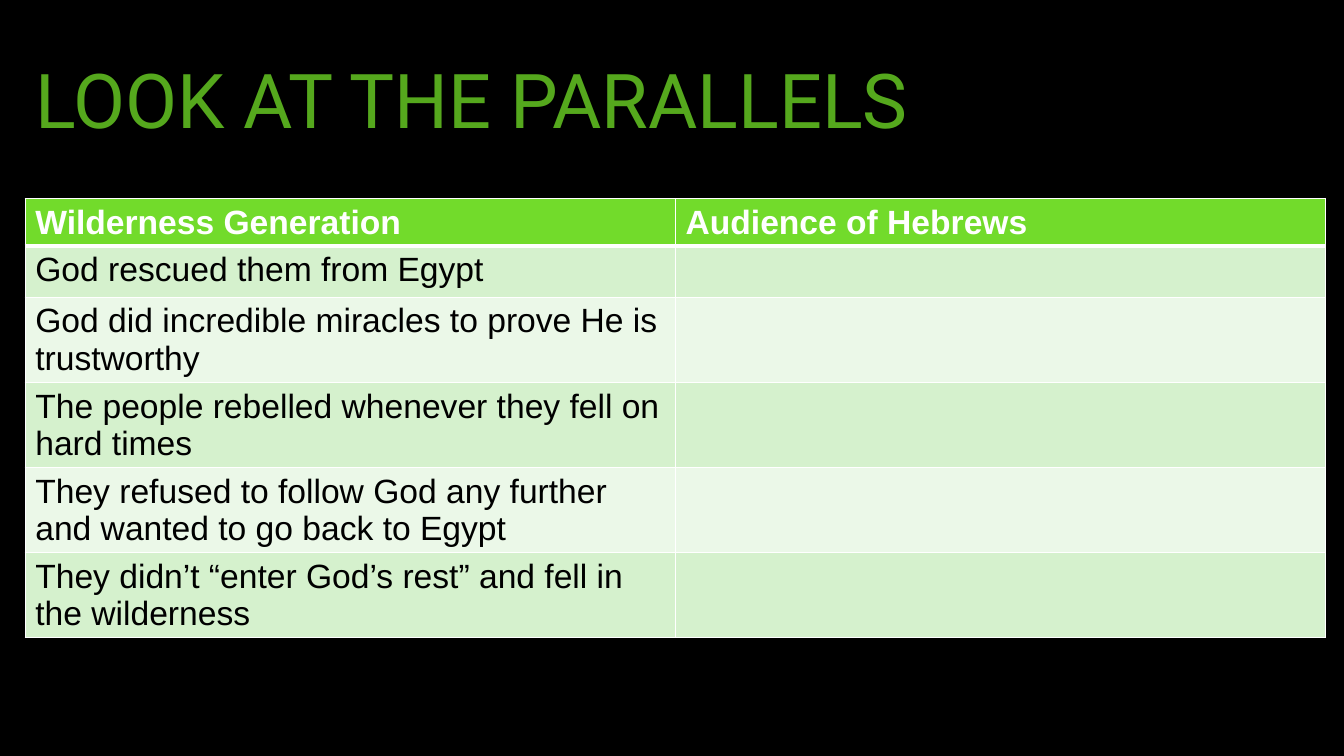
from dataclasses import dataclass

from lxml.etree import SubElement
from pptx import Presentation
from pptx.dml.color import RGBColor
from pptx.enum.text import MSO_ANCHOR, PP_ALIGN
from pptx.oxml.ns import qn
from pptx.table import _Cell
from pptx.text.text import TextFrame
from pptx.util import Emu, Inches, Pt

SLIDE_WIDTH = Inches(13.33)
SLIDE_HEIGHT = Inches(7.5)
WHITE = "FFFFFF"
BLACK = "000000"
HEADER_GREEN = "72DB2B"
BAND_GREENS = ("D5F1CD", "EBF8E8")


@dataclass(frozen=True)
class Parallel:
    wilderness: str
    hebrews: str = ""
    height: float = 0.84


HEADINGS = Parallel("Wilderness Generation", "Audience of Hebrews", 0.47)
PARALLELS = (
    Parallel("God rescued them from Egypt", height=0.51),
    Parallel("God did incredible miracles to prove He is trustworthy"),
    Parallel("The people rebelled whenever they fell on hard times"),
    Parallel("They refused to follow God any further and wanted to go back to Egypt"),
    Parallel("They didn’t “enter God’s rest” and fell in the wilderness"),
)


def share_x(percent: float) -> Emu:
    return Emu(round(SLIDE_WIDTH * percent / 100))


def share_y(percent: float) -> Emu:
    return Emu(round(SLIDE_HEIGHT * percent / 100))


def color(value: str) -> RGBColor:
    return RGBColor.from_string(value)


def write(frame: TextFrame, text: str, *, size: float, ink: str,
          face: str = "Arial", bold: bool = False, spacing: float = 1.0) -> None:
    frame.text = text
    paragraph = frame.paragraphs[0]
    paragraph.alignment = PP_ALIGN.LEFT
    paragraph.line_spacing = spacing
    for font in (paragraph.font, *(run.font for run in paragraph.runs)):
        font.name = face
        font.size = Pt(size)
        font.bold = bold
        font.color.rgb = color(ink)
    if not text:
        end = SubElement(paragraph._p, qn("a:endParaRPr"))
        end.set("sz", str(round(size * 100)))


def rule_cell(cell: _Cell, top: float, bottom: float) -> None:
    properties = cell._tc.get_or_add_tcPr()
    for side, points in (("L", 1), ("R", 1), ("T", top), ("B", bottom)):
        border = SubElement(properties, qn(f"a:ln{side}"), w=str(Pt(points)))
        fill = SubElement(border, qn("a:solidFill"))
        SubElement(fill, qn("a:srgbClr"), val=WHITE)


def fill_cell(cell: _Cell, text: str, row: int) -> None:
    is_heading = row == 0
    rule_cell(cell, top=3 if row == 1 else 1, bottom=3 if is_heading else 1)
    cell.fill.solid()
    cell.fill.fore_color.rgb = color(
        HEADER_GREEN if is_heading else BAND_GREENS[(row - 1) % 2])
    write(cell.text_frame, text, size=24, bold=is_heading,
          ink=WHITE if is_heading else BLACK)


def main() -> None:
    deck = Presentation()
    deck.slide_width = SLIDE_WIDTH
    deck.slide_height = SLIDE_HEIGHT
    slide = deck.slides.add_slide(deck.slide_layouts[5])
    slide.background.fill.solid()
    slide.background.fill.fore_color.rgb = color(BLACK)

    left, width = share_x(1.88), share_x(96.77)
    heading = slide.shapes.title
    heading.left, heading.top = left, share_y(2.93)
    heading.width, heading.height = width, share_y(21.6)
    heading.text_frame.vertical_anchor = MSO_ANCHOR.MIDDLE
    write(heading.text_frame, "LOOK AT THE PARALLELS",
          size=54, ink="55A81D", face="Roboto", spacing=0.9)

    entries = (HEADINGS, *PARALLELS)
    height = Inches(sum(entry.height for entry in entries))
    comparison = slide.shapes.add_table(
        len(entries), 2, left, share_y(26.27), width, height).table
    for row, entry in enumerate(entries):
        comparison.rows[row].height = Inches(entry.height)
        for column, text in enumerate((entry.wilderness, entry.hebrews)):
            fill_cell(comparison.cell(row, column), text, row)

    deck.save("out.pptx")


if __name__ == "__main__":
    main()
